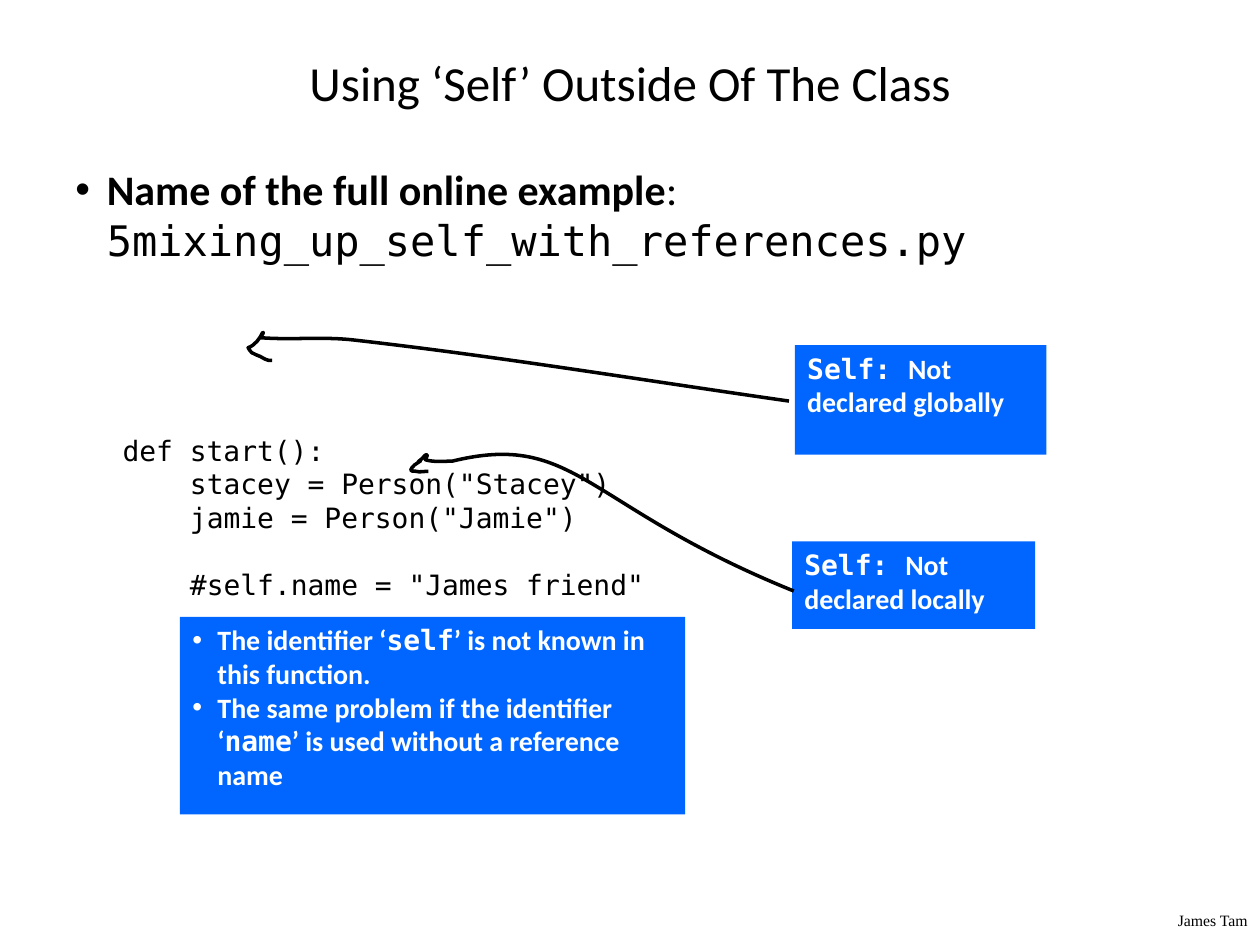
from dataclasses import dataclass
from typing import NamedTuple

from lxml.etree import SubElement
from pptx import Presentation
from pptx.dml.color import RGBColor
from pptx.enum.shapes import MSO_SHAPE
from pptx.enum.text import MSO_ANCHOR, PP_ALIGN
from pptx.oxml.ns import qn
from pptx.util import Pt


@dataclass(frozen=True)
class Theme:
    black: RGBColor = RGBColor(0, 0, 0)
    white: RGBColor = RGBColor(255, 255, 255)
    blue: RGBColor = RGBColor(0, 0x66, 0xFF)
    sans: str = "Calibri"
    mono: str = "DejaVu Sans Mono"
    serif: str = "Times New Roman"
    title_size: float = 28
    body_size: float = 24
    code_size: float = 16
    footer_size: float = 9
    line_width: float = 2


THEME = Theme()


class Box(NamedTuple):
    left: float
    top: float
    width: float
    height: float


class Run(NamedTuple):
    text: str
    font: str = THEME.sans
    bold: bool = False


@dataclass(frozen=True)
class Paragraph:
    runs: list[Run]
    margin: float = 0
    hanging: float = 0
    space_before: float = 0
    bullet: bool = False


@dataclass(frozen=True)
class Note:
    box: Box
    paragraphs: list[Paragraph]


@dataclass(frozen=True)
class InkArrow:
    start: tuple[float, float]
    curves: list[tuple[float, ...]]


CODE_MARGIN = 28.8
CODE_INDENT = 38.5
BLANK_LINE = 19

CODE = [
    Paragraph([Run("def start():", THEME.mono)], CODE_MARGIN),
    Paragraph([Run('stacey = Person("Stacey")', THEME.mono)], CODE_MARGIN + CODE_INDENT),
    Paragraph([Run('jamie = Person("Jamie")', THEME.mono)], CODE_MARGIN + CODE_INDENT),
    Paragraph([Run('#self.name = "James friend"', THEME.mono)],
              CODE_MARGIN + CODE_INDENT, space_before=BLANK_LINE),
]


def explanation(before: str, identifier: str, after: str) -> Paragraph:
    runs = [Run(before, bold=True), Run(identifier, THEME.mono, True), Run(after, bold=True)]
    return Paragraph(runs, margin=14.4, hanging=14.4, bullet=True)


def self_warning(scope: str) -> Paragraph:
    return Paragraph([Run("Self: ", THEME.mono, True), Run(f"Not declared {scope}", bold=True)])


EXPLANATION_NOTE = Note(Box(102.8, 352.5, 288.8, 113), [
    explanation("The identifier ‘", "self", "’ is not known in this function."),
    explanation("The same problem if the identifier ‘", "name",
                "’ is used without a reference name"),
])
LOCAL_NOTE = Note(Box(452.6, 309.4, 139, 50), [self_warning("locally")])
GLOBAL_NOTE = Note(Box(454.2, 197.2, 143.8, 62.6), [self_warning("globally")])

LOCAL_ARROW = InkArrow((453.6, 337.7), [
    (334.1, 289.4, 329, 246.2, 258.5, 263.5),
    (253.4, 263.5, 248.4, 264.2, 243.4, 262.8),
    (241.9, 262.8, 244.8, 260.6, 244.1, 259.9),
    (243.4, 259.2, 241.9, 261.4, 241.2, 262.1),
    (234.7, 267.1, 245.5, 259.9, 236.9, 265.7),
    (236.2, 266.4, 234.7, 267.8, 234.7, 268.6),
    (234.7, 269.3, 236.2, 269.3, 237.6, 269.3),
    (239.8, 270, 242.6, 269.3, 244.8, 269.3),
])
GLOBAL_ARROW = InkArrow((450.9, 229.2), [
    (367.9, 217.4, 285.8, 203.8, 203, 194.4),
    (185, 192.2, 167, 194.4, 149, 193),
    (147.6, 193, 150.5, 191.5, 150.5, 190.1),
    (150.5, 189.4, 149, 191.5, 149, 192.2),
    (148.3, 193, 147.6, 194.4, 146.9, 195.1),
    (145.4, 196.6, 144, 198, 141.8, 198.7),
    (142.6, 200.2, 143.3, 200.9, 144, 201.6),
    (144.7, 202.3, 146.2, 202.3, 146.9, 203),
    (149.8, 203.8, 150.5, 205.2, 153.4, 205.9),
    (154.1, 205.9, 154.8, 205.9, 155.5, 205.9),
])


def write_text(shape, content: list[Paragraph], *, size: float,
               color: RGBColor = THEME.black, align=PP_ALIGN.LEFT,
               anchor=MSO_ANCHOR.TOP) -> None:
    frame = shape.text_frame
    frame.word_wrap = True
    frame.vertical_anchor = anchor
    for index, item in enumerate(content):
        paragraph = frame.add_paragraph() if index else frame.paragraphs[0]
        paragraph.alignment = align
        paragraph.space_before = Pt(item.space_before)
        properties = paragraph._p.get_or_add_pPr()
        properties.set("marL", str(Pt(item.margin)))
        properties.set("indent", str(-Pt(item.hanging)))
        if item.bullet:
            SubElement(properties, qn("a:buFont")).set("typeface", "Arial")
            SubElement(properties, qn("a:buChar")).set("char", "•")
        for part in item.runs:
            run = paragraph.add_run()
            run.text = part.text
            run.font.name = part.font
            run.font.bold = part.bold
            run.font.size = Pt(size)
            run.font.color.rgb = color


def add_text(slide, box: Box, content: list[Paragraph], **text_format) -> None:
    shape = slide.shapes.add_textbox(*map(Pt, box))
    write_text(shape, content, **text_format)


def add_note(slide, note: Note) -> None:
    shape = slide.shapes.add_shape(MSO_SHAPE.RECTANGLE, *map(Pt, note.box))
    shape.shadow.inherit = False
    shape.fill.solid()
    shape.fill.fore_color.rgb = THEME.blue
    shape.line.fill.background()
    write_text(shape, note.paragraphs, size=THEME.code_size, color=THEME.white)


def add_ink_arrow(slide, arrow: InkArrow) -> None:
    builder = slide.shapes.build_freeform(*map(Pt, arrow.start))
    ends = [(Pt(curve[4]), Pt(curve[5])) for curve in arrow.curves]
    builder.add_line_segments(ends, close=False)
    shape = builder.convert_to_shape()
    segments = list(shape._element.iter(qn("a:lnTo")))
    for segment, curve in zip(segments, arrow.curves):
        bend = SubElement(segment.getparent(), qn("a:cubicBezTo"))
        segment.getparent().replace(segment, bend)
        for x, y in zip(curve[::2], curve[1::2]):
            point = SubElement(bend, qn("a:pt"))
            point.set("x", str(Pt(x) - shape.left))
            point.set("y", str(Pt(y) - shape.top))
    shape.shadow.inherit = False
    shape.fill.background()
    shape.line.color.rgb = THEME.black
    shape.line.width = Pt(THEME.line_width)


def main() -> None:
    presentation = Presentation()
    presentation.slide_width, presentation.slide_height = Pt(720), Pt(540)
    slide = presentation.slides.add_slide(presentation.slide_layouts[6])
    add_text(slide, Box(624, 517, 96, 18), [Paragraph([Run("James Tam", THEME.serif)])],
             size=THEME.footer_size, align=PP_ALIGN.RIGHT)
    add_text(slide, Box(36, 21.6, 648, 50.4),
             [Paragraph([Run("Using ‘Self’ Outside Of The Class")])],
             size=THEME.title_size, align=PP_ALIGN.CENTER, anchor=MSO_ANCHOR.MIDDLE)
    example = [Run("Name of the full online example", bold=True), Run(": "),
               Run("5mixing_up_self_with_references.py", THEME.mono)]
    add_text(slide, Box(36, 90, 648, 426),
             [Paragraph(example, margin=18, hanging=18, bullet=True)], size=THEME.body_size)
    add_text(slide, Box(34.2, 244, 534, 266), CODE, size=THEME.code_size)
    add_note(slide, EXPLANATION_NOTE)
    add_note(slide, LOCAL_NOTE)
    add_ink_arrow(slide, LOCAL_ARROW)
    add_note(slide, GLOBAL_NOTE)
    add_ink_arrow(slide, GLOBAL_ARROW)
    presentation.save("out.pptx")


if __name__ == "__main__":
    main()
